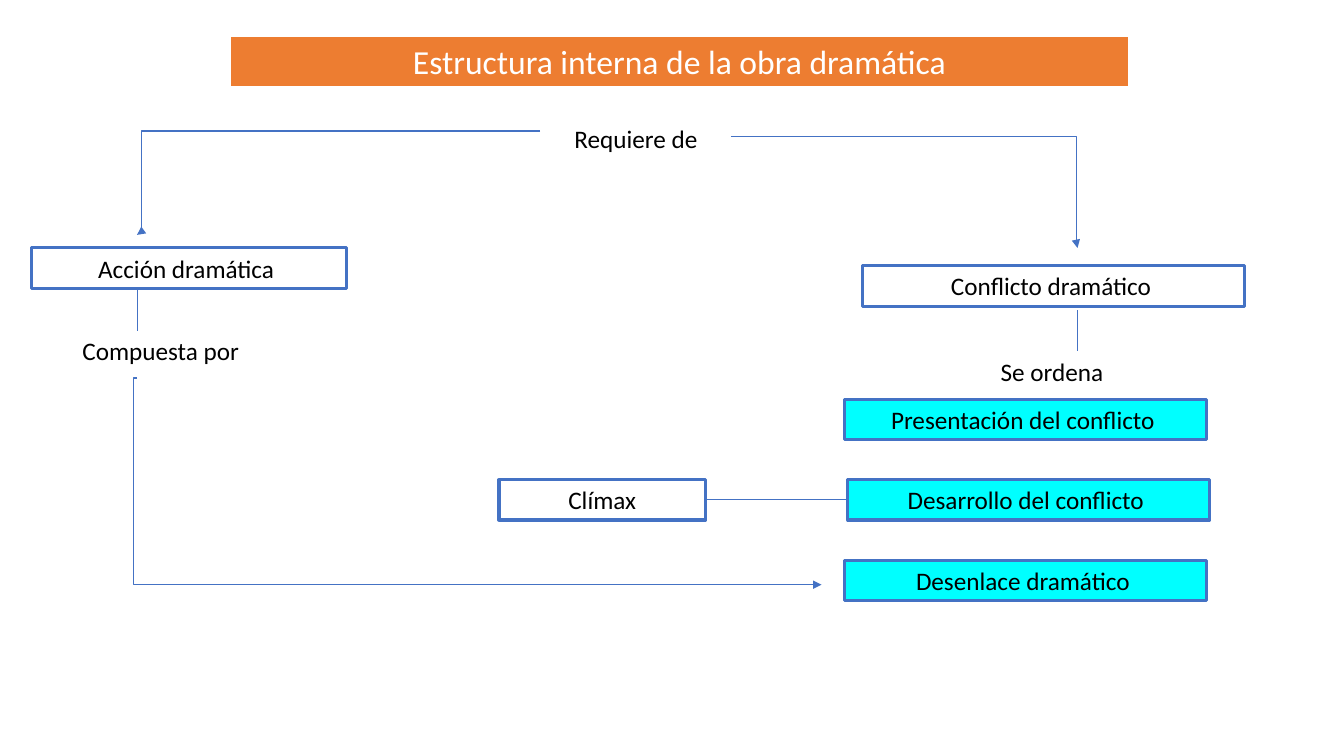
from lxml.etree import SubElement
from pptx import Presentation
from pptx.dml.color import RGBColor
from pptx.enum.shapes import MSO_CONNECTOR, MSO_SHAPE
from pptx.enum.text import MSO_ANCHOR, MSO_AUTO_SIZE, PP_ALIGN
from pptx.oxml.ns import qn
from pptx.util import Pt

FONT = "Calibri"
BLUE, CYAN, ORANGE = "4472C4", "00FFFF", "ED7D31"
WHITE, BLACK = "FFFFFF", "000000"
ROW = 28.8


def color(code):
    return RGBColor.from_string(code)


def paint(shape, fill, edge, width):
    shape.fill.solid()
    shape.fill.fore_color.rgb = color(fill)
    shape.line.color.rgb = color(edge)
    shape.line.width = Pt(width)


def write(shape, text, size=18, ink=BLACK, align=PP_ALIGN.CENTER):
    frame = shape.text_frame
    frame.word_wrap = True
    frame.auto_size = MSO_AUTO_SIZE.NONE
    frame.vertical_anchor = MSO_ANCHOR.MIDDLE
    para = frame.paragraphs[0]
    para.alignment = align
    run = para.add_run()
    run.text = text
    run.font.name = FONT
    run.font.size = Pt(size)
    run.font.color.rgb = color(ink)


def add_box(slide, text, left, top, width, height=ROW, fill=WHITE):
    box = slide.shapes.add_shape(
        MSO_SHAPE.RECTANGLE, Pt(left), Pt(top), Pt(width), Pt(height))
    box.shadow.inherit = False
    paint(box, fill, BLUE, 2.25)
    write(box, text)
    return box


def add_label(slide, text, left, top, width, align=PP_ALIGN.CENTER):
    label = slide.shapes.add_textbox(Pt(left), Pt(top), Pt(width), Pt(ROW))
    write(label, text, align=align)


def add_line(slide, x1, y1, x2, y2, bend=None):
    """Draw a plain line, or an elbow arrow when bend (share of width) is given."""
    kind = MSO_CONNECTOR.STRAIGHT if bend is None else MSO_CONNECTOR.ELBOW
    line = slide.shapes.add_connector(kind, Pt(x1), Pt(y1), Pt(x2), Pt(y2))
    line.line.color.rgb = color(BLUE)
    line.line.width = Pt(0.75)
    props = line._element.spPr
    if bend is not None:
        SubElement(props.find(qn("a:ln")), qn("a:tailEnd"), type="triangle")
        guides = props.find(qn("a:prstGeom")).find(qn("a:avLst"))
        SubElement(guides, qn("a:gd"), name="adj1",
                   fmla=f"val {round(bend * 100000)}")
    SubElement(props, qn("a:effectLst"))
    return line


def add_title(slide, left, top, width, height):
    title = slide.shapes.title
    title.left, title.top = Pt(left), Pt(top)
    title.width, title.height = Pt(width), Pt(height)
    paint(title, ORANGE, WHITE, 1.5)
    write(title, "Estructura interna de la obra dramática", 24, WHITE)


def add_root(slide, left, top, width):
    """Place the label from which both branches start."""
    add_line(slide, left + 29.5, top + 9.4, left - 258.5, top + 83.6, 0.988)
    add_line(slide, left + 165.6, top + 13, left + 413.3, top + 92.9, 0.996)
    add_label(slide, "Requiere de", left, top, width)


def add_action(slide, left, top, width):
    stem = left + 75.6
    add_box(slide, "Acción dramática ", left, top, width)
    add_line(slide, stem, top + 29.5, stem, top + 59.1)
    add_label(slide, "Compuesta por", left + 29.5, top + 59.1, width,
              PP_ALIGN.LEFT)
    add_line(slide, stem, top + 92.9, stem + 488.9, top + 240.5, -0.005)


def add_conflict(slide, left, top, width):
    stem = left + 153.4
    add_box(slide, "Conflicto dramático ", left, top, width, 29.5)
    add_line(slide, stem, top + 32.4, stem, top + 61.2)
    add_label(slide, "Se ordena ", left + 28.1, top + 61.2, 218.2)


def add_stages(slide, left, top, width, pitch=57.6):
    names = ("Presentación del conflicto ", "Desarrollo del conflicto ",
             "Desenlace dramático ")
    shifts = (0, 2.1, 0)
    boxes = [add_box(slide, name, left + shift, top + i * pitch, width,
                     fill=CYAN)
             for i, (name, shift) in enumerate(zip(names, shifts))]
    peak = add_box(slide, "Clímax", left - 247, top + pitch, 147.6)
    link = add_line(slide, left - 99.4, top + pitch, left, top + pitch)
    link.begin_connect(peak, 3)
    link.end_connect(boxes[1], 1)


def main():
    deck = Presentation()
    deck.slide_width, deck.slide_height = Pt(960), Pt(540)
    slide = deck.slides.add_slide(deck.slide_layouts[5])
    add_title(slide, 164.2, 25.9, 642.2, 36)
    add_root(slide, 356.4, 84.2, 195.8)
    add_action(slide, 22.3, 177.1, 225.4)
    add_conflict(slide, 616.3, 189.4, 272.9)
    add_stages(slide, 603.4, 285.1, 258.5)
    deck.save("out.pptx")


if __name__ == "__main__":
    main()
